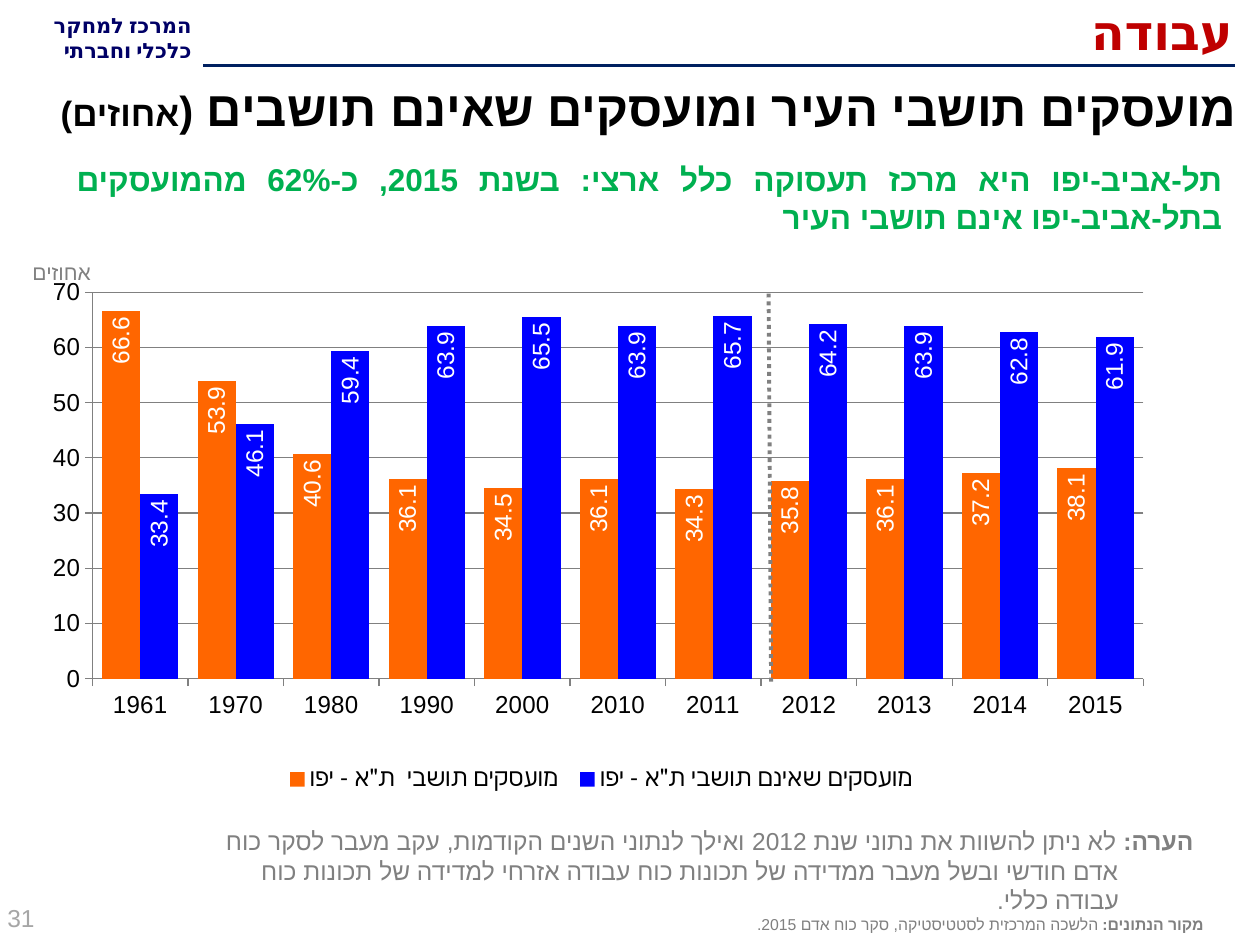
from lxml import etree
from pptx import Presentation
from pptx.chart.data import CategoryChartData
from pptx.dml.color import RGBColor
from pptx.enum import chart as charts, dml, lang, shapes, text
from pptx.oxml import parse_xml
from pptx.oxml.ns import nsdecls, qn
from pptx.util import Inches, Pt

COLORS = {
    "navy": "000066", "rule": "002060", "red": "BF0000", "green": "00B050",
    "black": "000000", "gray": "808080", "number": "A6A6A6", "white": "FFFFFF",
    "residents": "FF6600", "commuters": "0000FF",
}
ALIGN = text.PP_ALIGN
ANCHOR = text.MSO_ANCHOR
YEARS = ["1961", "1970", "1980", "1990", "2000", "2010", "2011", "2012", "2013", "2014", "2015"]
SERIES = [
    ("מועסקים תושבי  ת\"א - יפו", "residents",
     [66.6, 53.9, 40.6, 36.1, 34.5, 36.1, 34.3, 35.8, 36.1, 37.2, 38.1]),
    ("מועסקים שאינם תושבי ת\"א - יפו", "commuters",
     [33.4, 46.1, 59.4, 63.9, 65.5, 63.9, 65.7, 64.2, 63.9, 62.8, 61.9]),
]


def color(name):
    return RGBColor.from_string(COLORS[name])


def layout_xml(x, y, width, height, inner=False):
    target = '<c:layoutTarget val="inner"/>' if inner else ""
    return parse_xml(
        f'<c:layout {nsdecls("c")}><c:manualLayout>{target}'
        '<c:xMode val="edge"/><c:yMode val="edge"/>'
        f'<c:x val="{x}"/><c:y val="{y}"/><c:w val="{width}"/><c:h val="{height}"/>'
        '</c:manualLayout></c:layout>')


class Composer:
    def __init__(self, deck, font="Arial"):
        self.page = deck.slides.add_slide(deck.slide_layouts[6])
        self.font = font

    def style(self, font, size, name, bold=False):
        font.name = self.font
        font.size = Pt(size)
        font.bold = bold
        font.color.rgb = color(name)

    def text(self, area, paragraphs, name, font="Arial", align=ALIGN.RIGHT,
             anchor=ANCHOR.TOP, hanging=0):
        box = self.page.shapes.add_textbox(*map(Inches, area))
        frame = box.text_frame
        frame.word_wrap = True
        frame.vertical_anchor = anchor
        for index, spans in enumerate(paragraphs):
            para = frame.add_paragraph() if index else frame.paragraphs[0]
            para.alignment = align
            properties = para._p.get_or_add_pPr()
            properties.set("rtl", "1")
            if hanging:
                properties.set("marL", str(Inches(hanging)))
                properties.set("indent", str(-Inches(hanging)))
            for words, size, bold in spans:
                span = para.add_run()
                span.text = words
                self.style(span.font, size, name, bold)
                span.font.name = font
                span.font.language_id = lang.MSO_LANGUAGE_ID.HEBREW
                etree.SubElement(span.font._element, qn("a:cs")).set("typeface", font)

    def line(self, start, end, name, dash=None):
        line = self.page.shapes.add_connector(
            shapes.MSO_CONNECTOR.STRAIGHT, *map(Inches, start + end))
        line.line.color.rgb = color(name)
        line.line.width = Pt(2.25)
        if dash:
            line.line.dash_style = dash
        etree.SubElement(line._element.spPr, qn("a:effectLst"))

    def axis(self, axis):
        self.style(axis.tick_labels.font, 14, "black")
        axis.format.line.color.rgb = color("gray")
        axis.major_tick_mark = charts.XL_TICK_MARK.OUTSIDE
        axis.minor_tick_mark = charts.XL_TICK_MARK.NONE

    def columns(self, area, categories, rows):
        data = CategoryChartData(number_format="0.0")
        data.categories = categories
        for label, _, values in rows:
            data.add_series(label, values)
        chart = self.page.shapes.add_chart(
            charts.XL_CHART_TYPE.COLUMN_CLUSTERED, *map(Inches, area), data).chart
        self.style(chart.font, 18, "black")
        chart.has_title = False
        plot = chart.plots[0]
        plot.gap_width = 50
        plot.overlap = 0
        plot.vary_by_categories = False
        for series, (_, name, _) in zip(plot.series, rows):
            series.format.fill.solid()
            series.format.fill.fore_color.rgb = color(name)
            series.invert_if_negative = False
            labels = series.data_labels
            labels.show_value = True
            labels.position = charts.XL_LABEL_POSITION.INSIDE_END
            self.style(labels.font, 14, "white")
            body = labels._element.find(qn("c:txPr")).find(qn("a:bodyPr"))
            body.set("rot", "-5400000")
            body.set("vert", "horz")
        self.axis(chart.category_axis)
        scale = chart.value_axis
        self.axis(scale)
        scale.minimum_scale, scale.maximum_scale, scale.major_unit = 0, 70, 10
        scale.tick_labels.number_format = "0"
        scale.tick_labels.number_format_is_linked = False
        scale.major_gridlines.format.line.color.rgb = color("gray")
        chart.has_legend = True
        legend = chart.legend
        legend.position = charts.XL_LEGEND_POSITION.BOTTOM
        legend.include_in_layout = False
        self.style(legend.font, 14, "black")
        legend._element.find(qn("c:legendPos")).addnext(layout_xml(0.19, 0.89, 0.6, 0.07))
        plot_area = chart._chartSpace.chart.plotArea
        for layout in plot_area.findall(qn("c:layout")):
            plot_area.remove(layout)
        plot_area.insert(0, layout_xml(0.02, 0.03, 0.97, 0.71, inner=True))


def main():
    deck = Presentation()
    deck.slide_width, deck.slide_height = Inches(10), Inches(7.5)
    slide = Composer(deck)
    slide.text((-0.15, 0.05, 1.81, 0.51),
               [[(" המרכז למחקר ", 12, True)], [(" כלכלי וחברתי ", 12, True)]],
               "navy", font="Lato")
    slide.line((9.8, 0.52), (1.61, 0.52), "rule")
    slide.text((1.66, -0.03, 8.22, 0.55), [[("עבודה", 28, True)]], "red",
               font="Lato", anchor=ANCHOR.MIDDLE)
    slide.columns((0.42, 2.19, 8.74, 4.32), YEARS, SERIES)
    slide.text((0.2, 0.55, 9.71, 0.6),
               [[("מועסקים תושבי העיר ומועסקים שאינם תושבים ", 28, True),
                 ("(", 24, True), ("אחוזים) ", 20, True)]],
               "black", anchor=ANCHOR.MIDDLE)
    slide.text((1.46, 6.51, 8.11, 0.57),
               [[("הערה: ", 14, True),
                 ("לא ניתן להשוות את נתוני שנת 2012 ואילך לנתוני השנים הקודמות, "
                  "עקב מעבר לסקר כוח אדם חודשי ובשל מעבר ממדידה של תכונות כוח עבודה "
                  "אזרחי למדידה של תכונות כוח עבודה כללי. ", 14, False)]],
               "gray", hanging=0.59)
    slide.text((-0.04, 7.06, 2.33, 0.44), [[("31", 14, False)]], "number",
               align=ALIGN.LEFT, anchor=ANCHOR.MIDDLE)
    slide.line((6.1, 2.33), (6.12, 5.42), "gray", dml.MSO_LINE.ROUND_DOT)
    slide.text((-0.28, 2.01, 1.54, 0.3), [[("אחוזים", 12, False)]], "gray",
               align=ALIGN.CENTER)
    slide.text((0.51, 1.22, 9.29, 0.79),
               [[("תל-אביב-יפו היא מרכז תעסוקה כלל ארצי: בשנת 2015, כ-62% "
                  "מהמועסקים בתל-אביב-יפו אינם תושבי העיר", 18, True)]],
               "green", align=ALIGN.JUSTIFY)
    slide.text((2.72, 7.21, 6.93, 0.25),
               [[("מקור הנתונים: ", 9, True),
                 ("הלשכה המרכזית לסטטיסטיקה, סקר כוח אדם 2015.", 9, False)]], "gray")
    deck.save("out.pptx")


if __name__ == "__main__":
    main()
